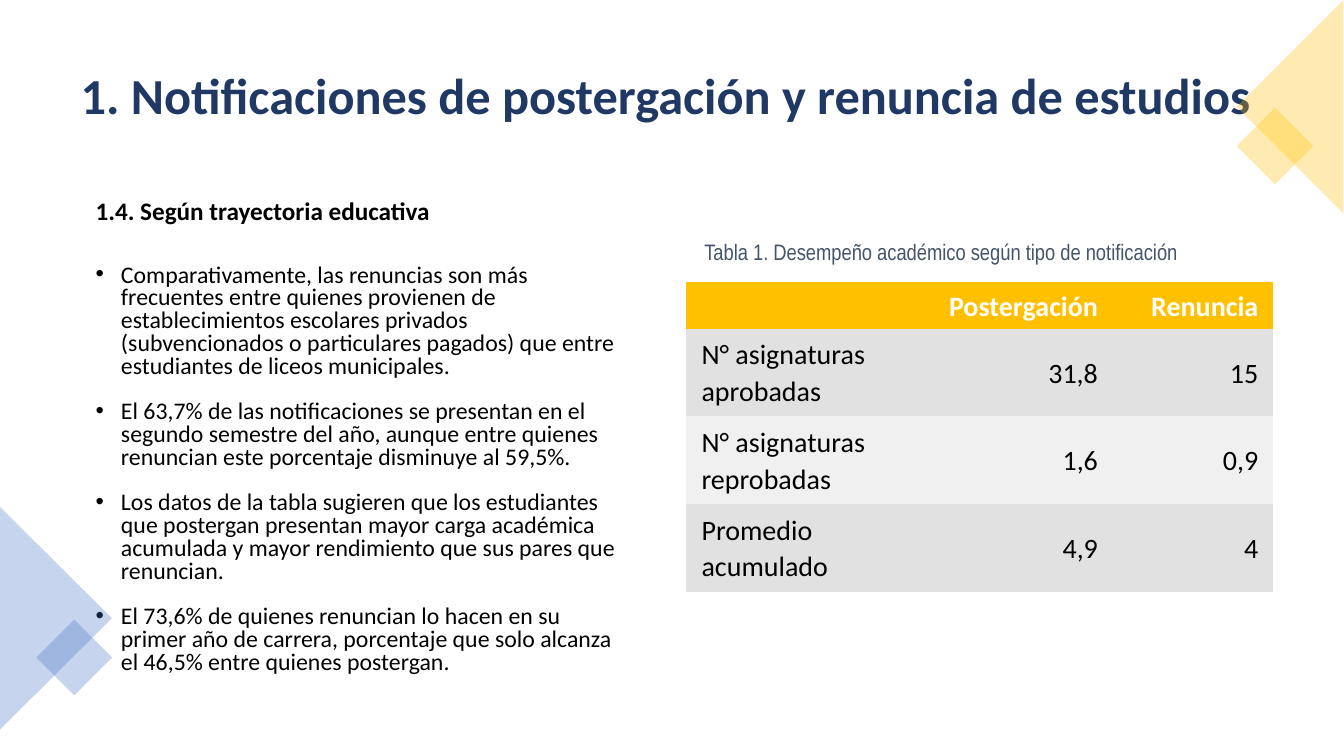
import pptx
import pptx.dml.color
import pptx.enum.shapes
import pptx.enum.text
import pptx.oxml.ns
import lxml.etree
from pptx.util import Cm, Pt

TITLE = "1. Notificaciones de postergación y renuncia de estudios"
SUBTITLE = "1.4. Según trayectoria educativa"
FINDINGS = [
    "Comparativamente, las renuncias son más frecuentes entre quienes provienen de establecimientos escolares privados (subvencionados o particulares pagados) que entre estudiantes de liceos municipales.",
    "El 63,7% de las notificaciones se presentan en el segundo semestre del año, aunque entre quienes renuncian este porcentaje disminuye al 59,5%.",
    "Los datos de la tabla sugieren que los estudiantes que postergan presentan mayor carga académica acumulada y mayor rendimiento que sus pares que renuncian.",
    "El 73,6% de quienes renuncian lo hacen en su primer año de carrera, porcentaje que solo alcanza el 46,5% entre quienes postergan.",
]
CAPTION = "Tabla 1. Desempeño académico según tipo de notificación"
PERFORMANCE = [
    ("", "Postergación", "Renuncia"),
    ("N° asignaturas aprobadas", "31,8", "15"),
    ("N° asignaturas reprobadas", "1,6", "0,9"),
    ("Promedio acumulado", "4,9", "4"),
]
COLUMN_WIDTHS = (5.87, 4.88, 4.04)
ROW_HEIGHTS = (1.17, 2.21, 2.21, 2.21)
ROW_FILLS = ("FFC000", "E1E1E1", "F0F0F0", "E1E1E1")

KINDS = pptx.enum.shapes.MSO_SHAPE
DECORATIONS = [
    (KINDS.ISOSCELES_TRIANGLE, 1.41, 15.58, 5.61, 2.82, 90, "4472C4"),
    (KINDS.RECTANGLE, 1.87, 16.57, 1.35, 1.35, 45, "4472C4"),
    (KINDS.RECTANGLE, 32.13, 3.68, 1.37, 1.37, 45, "FFC000"),
    (KINDS.ISOSCELES_TRIANGLE, 32.51, 2.69, 5.38, 2.69, 270, "FFC000"),
]
DECORATION_OPACITY = 30
ALIGN = pptx.enum.text.PP_ALIGN
ANCHOR = pptx.enum.text.MSO_ANCHOR


def set_color(target, color):
    target.rgb = pptx.dml.color.RGBColor.from_string(color)


def add_child(parent, tag, **attributes):
    return lxml.etree.SubElement(parent, pptx.oxml.ns.qn(tag), **attributes)


def write(frame, text, size, color="000000", font="Calibri", bold=False,
          align=ALIGN.LEFT, line=1.0, before=0, after=0, bullet=False):
    paragraph = frame.paragraphs[0]
    if paragraph.runs:
        paragraph = frame.add_paragraph()
    paragraph.alignment = align
    paragraph.line_spacing = line
    paragraph.space_before, paragraph.space_after = Pt(before), Pt(after)
    run = paragraph.add_run()
    run.text = text
    run.font.name, run.font.size, run.font.bold = font, Pt(size), bold
    set_color(run.font.color, color)
    if bullet:
        properties = paragraph._p.get_or_add_pPr()
        indent = Cm(0.64)
        properties.set("marL", str(indent))
        properties.set("indent", str(-indent))
        add_child(properties, "a:buFont", typeface="Arial")
        add_child(properties, "a:buChar", char="•")


def add_text_frame(slide, left, top, width, height, anchor=ANCHOR.TOP):
    box = slide.shapes.add_textbox(Cm(left), Cm(top), Cm(width), Cm(height))
    box.text_frame.word_wrap = True
    box.text_frame.vertical_anchor = anchor
    return box.text_frame


def add_decoration(slide, kind, center_x, center_y, width, height, rotation, color):
    shape = slide.shapes.add_shape(kind, Cm(center_x - width / 2), Cm(center_y - height / 2),
                                   Cm(width), Cm(height))
    shape.rotation = rotation
    shape.shadow.inherit = False
    shape.line.fill.background()
    shape.fill.solid()
    set_color(shape.fill.fore_color, color)
    fill_color = shape._element.spPr.find(".//" + pptx.oxml.ns.qn("a:srgbClr"))
    add_child(fill_color, "a:alpha", val=str(DECORATION_OPACITY * 1000))


def add_performance_table(slide, left, top):
    table = slide.shapes.add_table(len(PERFORMANCE), len(COLUMN_WIDTHS), Cm(left), Cm(top),
                                   Cm(sum(COLUMN_WIDTHS)), Cm(sum(ROW_HEIGHTS))).table
    table.horz_banding = False
    table._tbl.tblPr.find(pptx.oxml.ns.qn("a:tableStyleId")).text = "{2D5ABB26-0587-4C30-8999-92F81FD0307C}"
    for column, width in zip(table.columns, COLUMN_WIDTHS):
        column.width = Cm(width)
    for row_index, values in enumerate(PERFORMANCE):
        table.rows[row_index].height = Cm(ROW_HEIGHTS[row_index])
        header = row_index == 0
        for column_index, value in enumerate(values):
            cell = table.cell(row_index, column_index)
            cell.fill.solid()
            set_color(cell.fill.fore_color, ROW_FILLS[row_index])
            cell.margin_left = cell.margin_right = Cm(0.38)
            cell.margin_top = cell.margin_bottom = 0
            cell.vertical_anchor = ANCHOR.MIDDLE
            if value:
                write(cell.text_frame, value, 20, color="FFFFFF" if header else "000000",
                      bold=header, align=ALIGN.RIGHT if column_index else ALIGN.LEFT,
                      line=1.07, after=8)


def main():
    presentation = pptx.Presentation()
    presentation.slide_width, presentation.slide_height = Cm(33.87), Cm(19.05)
    slide = presentation.slides.add_slide(presentation.slide_layouts[6])

    title = add_text_frame(slide, 1.78, 0.89, 30.3, 3.15, anchor=ANCHOR.MIDDLE)
    write(title, TITLE, 36, color="203864", bold=True, line=0.9)

    body = add_text_frame(slide, 2.16, 4.95, 13.89, 12.22)
    write(body, SUBTITLE, 18, bold=True, line=0.8, before=10, after=18)
    for finding in FINDINGS:
        write(body, finding, 17, line=0.8, before=10, after=6, bullet=True)

    for decoration in DECORATIONS:
        add_decoration(slide, *decoration)

    add_performance_table(slide, 17.3, 7.11)
    caption = add_text_frame(slide, 17.5, 5.87, 14.15, 0.94)
    write(caption, CAPTION, 16, color="44546A", font="Arial Narrow", after=10)

    presentation.save("out.pptx")


if __name__ == "__main__":
    main()
